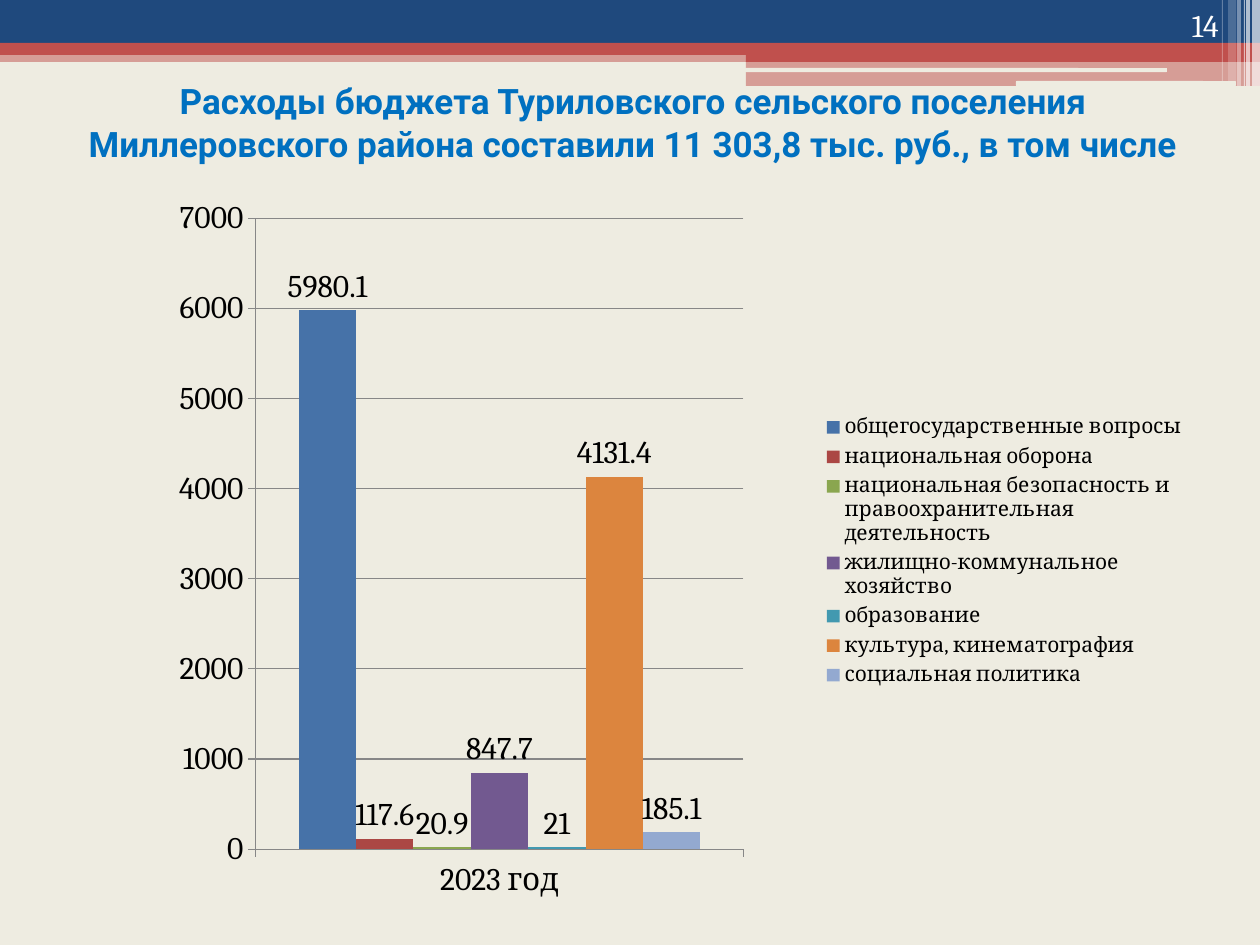
"""Build the budget spending slide with its clustered column chart."""
from lxml import etree
from pptx import Presentation
from pptx import util as u
from pptx.chart.data import CategoryChartData
from pptx.dml.color import RGBColor
from pptx.enum import chart as ch, shapes, text
from pptx.oxml.ns import qn

EMU_PER_PX = 914400 / 126

CREAM = RGBColor(0xEE, 0xEC, 0xE1)
NAVY = RGBColor(0x1F, 0x49, 0x7D)
RED = RGBColor(0xC0, 0x50, 0x4D)
WHITE = RGBColor(0xFF, 0xFF, 0xFF)
BLACK = RGBColor(0x00, 0x00, 0x00)
TITLE_BLUE = RGBColor(0x00, 0x70, 0xC0)
GRID_GRAY = RGBColor(0x87, 0x87, 0x87)

TITLE = ("Расходы бюджета Туриловского сельского поселения Миллеровского района "
         "составили 11 303,8 тыс. руб., в том числе")

SPENDING = [
    ("общегосударственные вопросы", 5980.1, RGBColor(0x46, 0x72, 0xA8)),
    ("национальная оборона", 117.6, RGBColor(0xAB, 0x47, 0x44)),
    ("национальная безопасность и правоохранительная деятельность", 20.9,
     RGBColor(0x8A, 0xA6, 0x4F)),
    ("жилищно-коммунальное хозяйство", 847.7, RGBColor(0x72, 0x59, 0x90)),
    ("образование", 21, RGBColor(0x42, 0x99, 0xB0)),
    ("культура, кинематография", 4131.4, RGBColor(0xDC, 0x85, 0x3E)),
    ("социальная политика", 185.1, RGBColor(0x93, 0xA9, 0xD0)),
]

BANDS = [
    ((0, 50, 1260, 12), RED, 50),
    ((0, 0, 1260, 43), NAVY, 100),
    ((0, 43, 1260, 12), RED, 100),
    ((746, 49, 514, 13), RED, 100),
    ((746, 61, 514, 25), RED, 50),
]
SLITS = [(745, 68, 422, 4), (1016, 81, 220, 5)]
STRIPES = [
    (1252, 8, 86, 65),
    (1246, 4, 86, 65),
    (1244, 1, 86, 60),
    (1237, 4, 86, 40),
    (1228, 8, 81, 20),
    (1222, 1, 81, 30),
]


def px(length):
    return u.Emu(round(length * EMU_PER_PX))


def add_bar(slide, box, color, opacity=100, kind=shapes.MSO_SHAPE.RECTANGLE):
    bar = slide.shapes.add_shape(kind, *map(px, box))
    bar.shadow.inherit = False
    bar.fill.solid()
    bar.fill.fore_color.rgb = color
    bar.line.fill.background()
    if opacity < 100:
        fill_color = bar.element.spPr.find(".//" + qn("a:srgbClr"))
        etree.SubElement(fill_color, qn("a:alpha"), val=str(opacity * 1000))


def style_font(font, size, name, color, bold=False):
    font.size = u.Pt(size)
    font.name = name
    font.color.rgb = color
    font.bold = bold


def add_label(slide, box, wording, align, anchor, font, bottom=6):
    label = slide.shapes.add_textbox(*map(px, box))
    frame = label.text_frame
    frame.word_wrap = True
    frame.vertical_anchor = anchor
    frame.margin_top = 0
    frame.margin_bottom = px(bottom)
    frame.text = wording
    paragraph = frame.paragraphs[0]
    paragraph.alignment = align
    style_font(paragraph.runs[0].font, *font)


def set_layout(parent, index, fractions, inner=False):
    for old in parent.findall(qn("c:layout")):
        parent.remove(old)
    layout = etree.Element(qn("c:layout"))
    manual = etree.SubElement(layout, qn("c:manualLayout"))
    if inner:
        etree.SubElement(manual, qn("c:layoutTarget"), val="inner")
    for mode in ("xMode", "yMode"):
        etree.SubElement(manual, qn("c:" + mode), val="edge")
    for side, fraction in zip("xywh", fractions):
        etree.SubElement(manual, qn("c:" + side), val=str(fraction))
    parent.insert(index, layout)


def style_axes(chart):
    values, categories = chart.value_axis, chart.category_axis
    values.minimum_scale, values.maximum_scale, values.major_unit = 0, 7000, 1000
    values.has_major_gridlines = True
    for axis in (values, categories):
        axis.major_tick_mark = ch.XL_TICK_MARK.OUTSIDE
        axis.minor_tick_mark = ch.XL_TICK_MARK.NONE
    for line in (values.format.line, categories.format.line,
                 values.major_gridlines.format.line):
        line.color.rgb = GRID_GRAY
        line.width = u.Pt(0.75)


def style_series(plot):
    plot.vary_by_categories = False
    plot.gap_width = 150
    plot.overlap = 0
    for series, (_, _, color) in zip(plot.series, SPENDING):
        series.format.fill.solid()
        series.format.fill.fore_color.rgb = color
        labels = series.data_labels
        labels.show_value = True
        labels.number_format = "General"
        labels.number_format_is_linked = False
        labels.position = ch.XL_LABEL_POSITION.OUTSIDE_END
        style_font(labels.font, 18, "Cambria", BLACK)


def add_spending_chart(slide, box):
    data = CategoryChartData()
    data.categories = ["2023 год"]
    for name, amount, _ in SPENDING:
        data.add_series(name, [amount])
    chart = slide.shapes.add_chart(
        ch.XL_CHART_TYPE.COLUMN_CLUSTERED, *map(px, box), data).chart
    chart.has_title = False
    style_font(chart.font, 18, "Cambria", BLACK)
    style_axes(chart)
    style_series(chart.plots[0])
    chart.has_legend = True
    legend = chart.legend
    legend.position = ch.XL_LEGEND_POSITION.RIGHT
    legend.include_in_layout = False
    style_font(legend.font, 12, "Cambria", BLACK)
    root = chart.element
    set_layout(root.find(".//" + qn("c:plotArea")), 0,
               (0.17, 0.03, 0.43, 0.89), inner=True)
    set_layout(root.find(".//" + qn("c:legend")), 1, (0.67, 0.3, 0.32, 0.4))


def main():
    deck = Presentation()
    deck.slide_width, deck.slide_height = px(1260), px(945)
    slide = deck.slides.add_slide(deck.slide_layouts[6])
    slide.background.fill.solid()
    slide.background.fill.fore_color.rgb = CREAM
    for box, color, opacity in BANDS:
        add_bar(slide, box, color, opacity)
    for box in SLITS:
        add_bar(slide, box, CREAM, kind=shapes.MSO_SHAPE.ROUNDED_RECTANGLE)
    for left, width, height, opacity in STRIPES:
        add_bar(slide, (left, 0, width, height), WHITE, opacity)
    add_label(slide, (49, 88, 1168, 113), TITLE, text.PP_ALIGN.CENTER,
              text.MSO_ANCHOR.MIDDLE, (20, "Roboto", TITLE_BLUE, True), bottom=45)
    add_spending_chart(slide, (63, 197, 1134, 709))
    add_label(slide, (1126, 0, 105, 50), "14", text.PP_ALIGN.RIGHT,
              text.MSO_ANCHOR.BOTTOM, (18, "Cambria", WHITE))
    deck.save("out.pptx")


if __name__ == "__main__":
    main()
